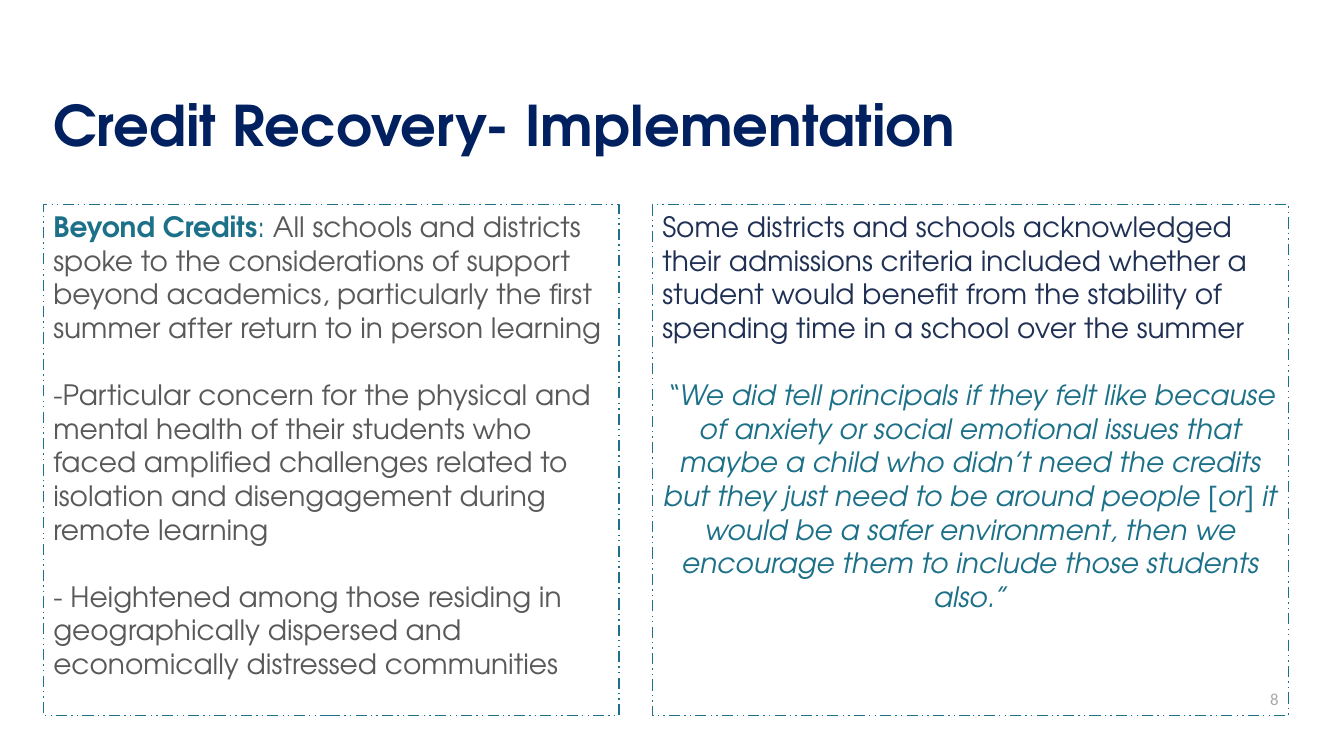
from pptx import Presentation
from pptx.dml.color import RGBColor
from pptx.enum.dml import MSO_LINE
from pptx.enum.shapes import MSO_SHAPE
from pptx.enum.text import MSO_ANCHOR, PP_ALIGN
from pptx.util import Pt

PX = 9144
NAVY = RGBColor(0x00, 0x20, 0x60)
INK = RGBColor(0x1F, 0x30, 0x54)
TEAL = RGBColor(0x1C, 0x70, 0x88)
GRAY = RGBColor(0x59, 0x59, 0x59)
PALE_GRAY = RGBColor(0xA8, 0xA8, 0xA8)
HEADING_FONT = "TeX Gyre Adventor"
NUMBER_FONT = "Calibri"
BODY_SIZE = 20
PARAGRAPH_GAP = 24

PANEL_TOP, PANEL_HEIGHT = 203, 507
LEFT_PARAGRAPHS = [
    (PP_ALIGN.LEFT, [
        ("Beyond Credits", TEAL, True, False),
        (": ", TEAL, False, False),
        ("All schools and districts spoke to the considerations of support beyond "
         "academics, particularly the first summer after return to in person learning",
         GRAY, False, False),
    ]),
    (PP_ALIGN.LEFT, [
        ("-Particular concern for the physical and mental health of their students who "
         "faced amplified challenges related to isolation and disengagement during "
         "remote learning", GRAY, False, False),
    ]),
    (PP_ALIGN.LEFT, [
        ("- Heightened among those residing in geographically dispersed and "
         "economically distressed communities", GRAY, False, False),
    ]),
]
RIGHT_PARAGRAPHS = [
    (PP_ALIGN.LEFT, [
        ("Some districts and schools acknowledged their admissions criteria included "
         "whether a student would benefit from the stability of spending time in a "
         "school over the summer", INK, False, False),
    ]),
    (PP_ALIGN.CENTER, [
        ("“We did tell principals if they felt like because of anxiety or social "
         "emotional issues that maybe a child who didn’t need the credits but they "
         "just need to be around people [or] it would be a safer environment, then we "
         "encourage them to include those students also.”", TEAL, False, True),
    ]),
]


def scaled(box):
    return [length * PX for length in box]


def add_run(paragraph, text, color, size, font=HEADING_FONT, bold=False, italic=False):
    run = paragraph.add_run()
    run.text = text
    run.font.name = font
    run.font.size = Pt(size)
    run.font.color.rgb = color
    run.font.bold = bold
    run.font.italic = italic


def add_text_box(slide, box, anchor):
    frame = slide.shapes.add_textbox(*scaled(box)).text_frame
    frame.word_wrap = True
    frame.vertical_anchor = anchor
    return frame.paragraphs[0]


def add_title(slide, box):
    paragraph = add_text_box(slide, box, MSO_ANCHOR.TOP)
    add_run(paragraph, "Credit Recovery- Implementation", NAVY, 40, bold=True)


def add_slide_number(slide, box):
    paragraph = add_text_box(slide, box, MSO_ANCHOR.MIDDLE)
    paragraph.alignment = PP_ALIGN.RIGHT
    add_run(paragraph, "8", PALE_GRAY, 12, font=NUMBER_FONT)


def add_panel(slide, box, paragraphs):
    shape = slide.shapes.add_shape(MSO_SHAPE.RECTANGLE, *scaled(box))
    shape.shadow.inherit = False
    shape.fill.background()
    shape.line.color.rgb = TEAL
    shape.line.width = Pt(1)
    shape.line.dash_style = MSO_LINE.DASH_DOT_DOT
    frame = shape.text_frame
    frame.word_wrap = True
    frame.vertical_anchor = MSO_ANCHOR.TOP
    for index, (alignment, runs) in enumerate(paragraphs):
        paragraph = frame.add_paragraph() if index else frame.paragraphs[0]
        paragraph.alignment = alignment
        if index:
            paragraph.space_before = Pt(PARAGRAPH_GAP)
        for text, color, bold, italic in runs:
            add_run(paragraph, text, color, BODY_SIZE, bold=bold, italic=italic)


def main():
    presentation = Presentation()
    presentation.slide_width, presentation.slide_height = scaled((1333, 750))
    slide = presentation.slides.add_slide(presentation.slide_layouts[6])
    add_slide_number(slide, (982, 680, 296, 27))
    add_title(slide, (43, 85, 1224, 79))
    add_panel(slide, (43, PANEL_TOP, 571, PANEL_HEIGHT), LEFT_PARAGRAPHS)
    add_panel(slide, (647, PANEL_TOP, 631, PANEL_HEIGHT), RIGHT_PARAGRAPHS)
    presentation.save("out.pptx")


if __name__ == "__main__":
    main()
